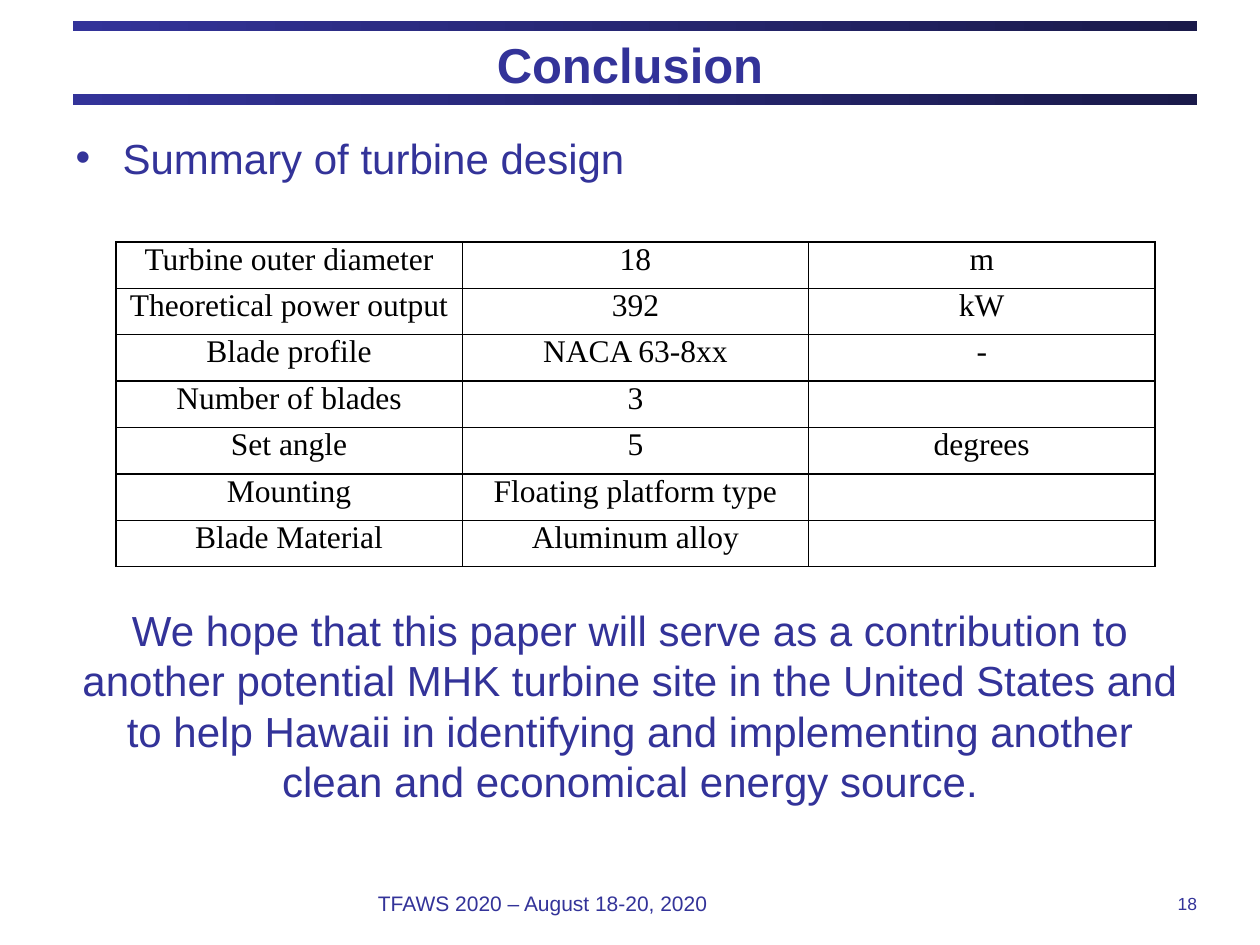
from dataclasses import dataclass

from lxml.etree import SubElement
from pptx import Presentation
from pptx.dml.color import RGBColor
from pptx.enum.shapes import MSO_SHAPE as Preset
from pptx.enum.text import MSO_ANCHOR as Anchor, MSO_AUTO_SIZE as AutoSize, PP_ALIGN as Align
from pptx.oxml.ns import qn
from pptx.util import Emu, Pt

EMU_PER_PX = 914400 / 126
INDIGO = "333399"
NIGHT = "1A1A4A"
BLACK = "000000"


@dataclass(frozen=True)
class Box:
    left: int
    top: int
    width: int
    height: int


@dataclass(frozen=True)
class FooterPart:
    wording: str
    box: Box
    size: int
    align: Align


BARS = [Box(73, 94, 1124, 11), Box(73, 21, 1124, 10)]
TITLE_BOX = Box(63, 27, 1134, 73)
BODY_BOX = Box(63, 126, 1134, 746)
TABLE_BOX = Box(116, 242, 1039, 325)
FOOTER = [
    FooterPart("TFAWS 2020 – August 18-20, 2020", Box(378, 882, 504, 42), 12, Align.LEFT),
    FooterPart("18", Box(935, 882, 262, 42), 10, Align.RIGHT),
]
DESIGN = [
    ("Turbine outer diameter", "18", "m"),
    ("Theoretical power output", "392", "kW"),
    ("Blade profile", "NACA 63-8xx", "-"),
    ("Number of blades", "3", ""),
    ("Set angle", "5", "degrees"),
    ("Mounting", "Floating platform type", ""),
    ("Blade Material", "Aluminum alloy", ""),
]
CLOSING = (
    "We hope that this paper will serve as a contribution to another potential MHK "
    "turbine site in the United States and to help Hawaii in identifying and "
    "implementing another clean and economical energy source."
)


def px(length: float) -> Emu:
    return Emu(round(length * EMU_PER_PX))


def color(code: str) -> RGBColor:
    return RGBColor.from_string(code)


def apply(target, formats: dict) -> None:
    for key, value in formats.items():
        setattr(target, key, value)


def frame(box: Box) -> tuple:
    return px(box.left), px(box.top), px(box.width), px(box.height)


def place(shape, box: Box) -> None:
    apply(shape, dict(zip(("left", "top", "width", "height"), frame(box))))


def style(paragraph, size: int, align: Align, face: str = "Arial",
          ink: str = INDIGO, bold: bool = False, before: int = 0) -> None:
    apply(paragraph, {"alignment": align, "space_before": Pt(before)})
    apply(paragraph.font, {"size": Pt(size), "name": face, "bold": bold})
    paragraph.font.color.rgb = color(ink)


def draw_bar(slide, box: Box) -> None:
    bar = slide.shapes.add_shape(Preset.RECTANGLE, *frame(box))
    bar.shadow.inherit = False
    bar.line.fill.background()
    bar.fill.gradient()
    bar.fill.gradient_angle = 0
    for stop, position, ink in zip(bar.fill.gradient_stops, (0, 1), (INDIGO, NIGHT)):
        stop.position = position
        stop.color.rgb = color(ink)


def fill_title(title) -> None:
    place(title, TITLE_BOX)
    title.text_frame.text = "Conclusion"
    apply(title.text_frame, {"vertical_anchor": Anchor.MIDDLE, "auto_size": AutoSize.NONE,
                             "margin_top": 0, "margin_bottom": 0})
    style(title.text_frame.paragraphs[0], 28, Align.CENTER, bold=True)


def set_bullet(paragraph, symbol: str, indent: int) -> None:
    properties = paragraph._p.get_or_add_pPr()
    properties.set("marL", str(px(indent)))
    properties.set("indent", str(px(-indent)))
    if symbol:
        SubElement(properties, qn("a:buFont"), typeface="Arial")
        SubElement(properties, qn("a:buChar"), char=symbol)
    else:
        SubElement(properties, qn("a:buNone"))


def fill_body(body) -> None:
    place(body, BODY_BOX)
    text = body.text_frame
    apply(text, {"auto_size": AutoSize.NONE, "vertical_anchor": Anchor.TOP})
    summary, closing = text.paragraphs[0], text.add_paragraph()
    summary.text, closing.text = "Summary of turbine design", CLOSING
    set_bullet(summary, "•", 47)
    set_bullet(closing, "", 0)
    style(summary, 24, Align.LEFT)
    style(closing, 24, Align.CENTER, before=241)


def draw_footer(slide, part: FooterPart) -> None:
    text = slide.shapes.add_textbox(*frame(part.box)).text_frame
    apply(text, {"word_wrap": True, "vertical_anchor": Anchor.MIDDLE, "margin_left": 0,
                 "margin_right": 0, "margin_top": 0, "margin_bottom": 0})
    text.text = part.wording
    style(text.paragraphs[0], part.size, part.align)


def border(cell) -> None:
    properties = cell._tc.get_or_add_tcPr()
    for index, side in enumerate(("a:lnL", "a:lnR", "a:lnT", "a:lnB")):
        edge = properties.makeelement(qn(side), {"w": str(Pt(1))})
        SubElement(SubElement(edge, qn("a:solidFill")), qn("a:srgbClr"), val=BLACK)
        properties.insert(index, edge)


def draw_table(slide) -> None:
    rows, columns = len(DESIGN), len(DESIGN[0])
    table = slide.shapes.add_table(rows, columns, *frame(TABLE_BOX)).table
    apply(table, {"first_row": False, "horz_banding": False})
    for column in table.columns:
        column.width = px(TABLE_BOX.width / columns)
    for row, values in zip(table.rows, DESIGN):
        row.height = px(TABLE_BOX.height / rows)
        for cell, value in zip(row.cells, values):
            cell.text = value
            apply(cell, {"margin_left": px(9), "margin_right": px(9),
                         "margin_top": 0, "margin_bottom": 0})
            style(cell.text_frame.paragraphs[0], 18, Align.CENTER, "Times New Roman", BLACK)
            cell.fill.background()
            border(cell)


def main() -> None:
    deck = Presentation()
    apply(deck, {"slide_width": px(1260), "slide_height": px(945)})
    slide = deck.slides.add_slide(deck.slide_layouts[1])
    for bar in BARS:
        draw_bar(slide, bar)
    fill_title(slide.shapes.title)
    fill_body(slide.placeholders[1])
    for part in FOOTER:
        draw_footer(slide, part)
    draw_table(slide)
    deck.save("out.pptx")


if __name__ == "__main__":
    main()
